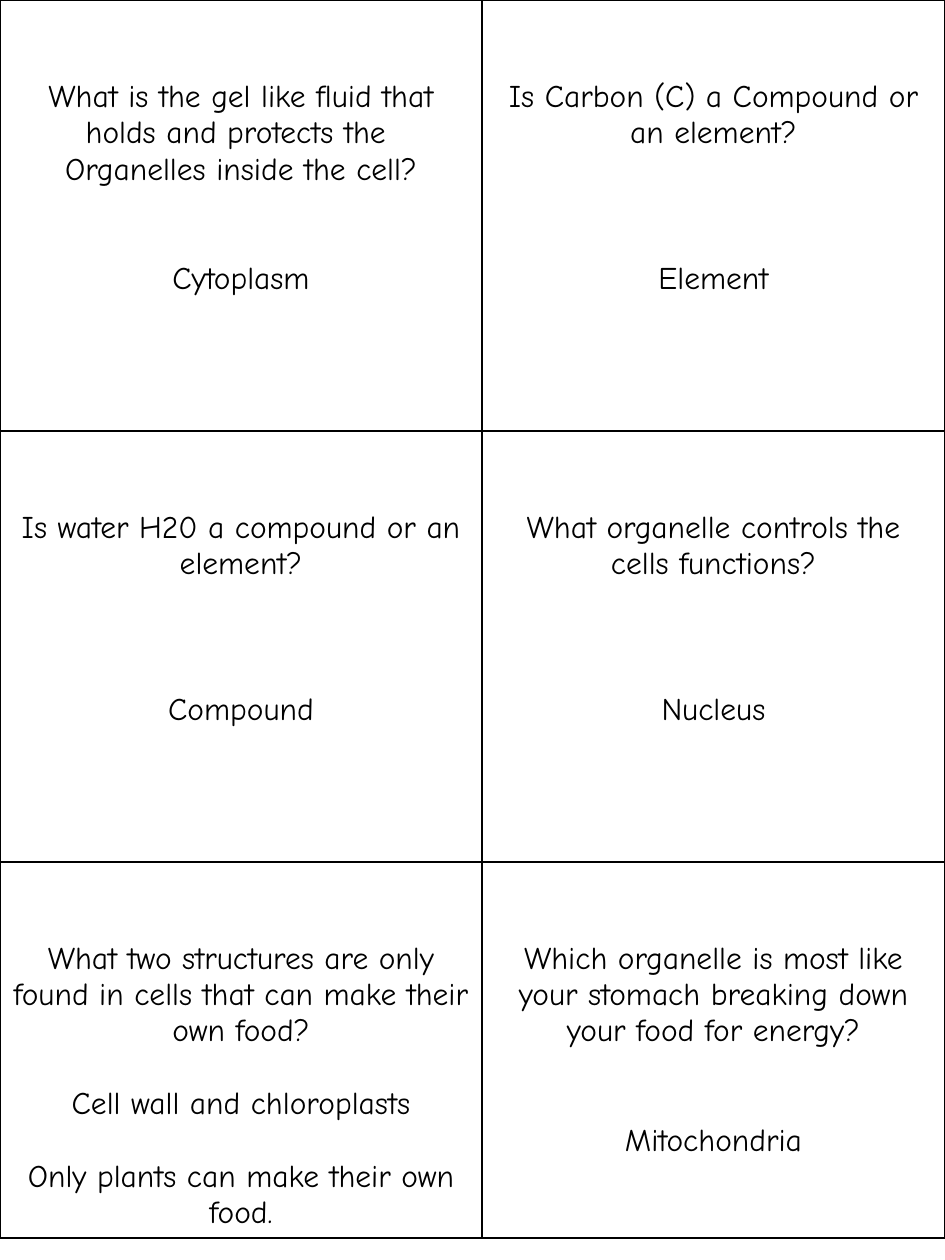
import lxml.etree
import pptx
import pptx.dml.color
import pptx.enum.text
import pptx.oxml.ns
import pptx.util

COLORS = {"ink": "000000", "paper": "FFFFFF"}
LINE = 20.8
COLUMN_SHARES = [0.51, 0.49]
ROW_SHARES = [0.342, 0.342, 0.295]
BORDERS = ["lnL", "lnR", "lnT", "lnB"]

CARDS = [
    [
        [
            ("What is the gel like fluid that", 0),
            ("holds and protects the ", 0),
            ("Organelles inside the cell?", 0),
            ("Cytoplasm", 2),
        ],
        [("Is Carbon (C) a Compound or an element?", 0), ("Element", 3)],
    ],
    [
        [("Is water H20 a compound or an element?", 0), ("Compound", 3)],
        [("What organelle controls the cells functions?", 0), ("Nucleus", 3)],
    ],
    [
        [
            ("What two structures are only found in cells that can make their own food?", 0),
            ("Cell wall and chloroplasts", 1),
            ("Only plants can make their own food.", 1),
        ],
        [
            ("Which organelle is most like your stomach breaking down your food for energy?", 0),
            ("Mitochondria", 2),
        ],
    ],
]


def write(paragraph, text, size=18, font="Comic Neue", color="ink", lines_before=0):
    paragraph.alignment = pptx.enum.text.PP_ALIGN.CENTER
    paragraph.space_before = pptx.util.Pt(lines_before * LINE)
    run = paragraph.add_run()
    run.text = text
    run.font.size = pptx.util.Pt(size)
    run.font.name = font
    run.font.color.rgb = pptx.dml.color.RGBColor.from_string(COLORS[color])


def add_borders(cell, color="ink", width=1):
    properties = cell._tc.get_or_add_tcPr()
    for position, tag in enumerate(BORDERS):
        border = lxml.etree.Element(pptx.oxml.ns.qn("a:" + tag), w=str(pptx.util.Pt(width)))
        fill = lxml.etree.SubElement(border, pptx.oxml.ns.qn("a:solidFill"))
        lxml.etree.SubElement(fill, pptx.oxml.ns.qn("a:srgbClr"), val=COLORS[color])
        properties.insert(position, border)


presentation = pptx.Presentation()
presentation.slide_width = pptx.util.Inches(7.5)
presentation.slide_height = pptx.util.Inches(10)
width, height = presentation.slide_width, presentation.slide_height
slide = presentation.slides.add_slide(presentation.slide_layouts[6])

table = slide.shapes.add_table(
    len(ROW_SHARES), len(COLUMN_SHARES), 0, 0, width, int(height * sum(ROW_SHARES))
).table
table.first_row = False
table.horz_banding = False
for column, share in zip(table.columns, COLUMN_SHARES):
    column.width = int(width * share)

for row, share, cards in zip(table.rows, ROW_SHARES, CARDS):
    row.height = int(height * share)
    for cell, card in zip(row.cells, cards):
        cell.fill.solid()
        cell.fill.fore_color.rgb = pptx.dml.color.RGBColor.from_string(COLORS["paper"])
        cell.margin_top = pptx.util.Inches(0.05) + pptx.util.Pt(2 * LINE)
        add_borders(cell)
        frame = cell.text_frame
        for index, (text, lines_before) in enumerate(card):
            paragraph = frame.add_paragraph() if index else frame.paragraphs[0]
            write(paragraph, text, lines_before=lines_before)

presentation.save("out.pptx")
